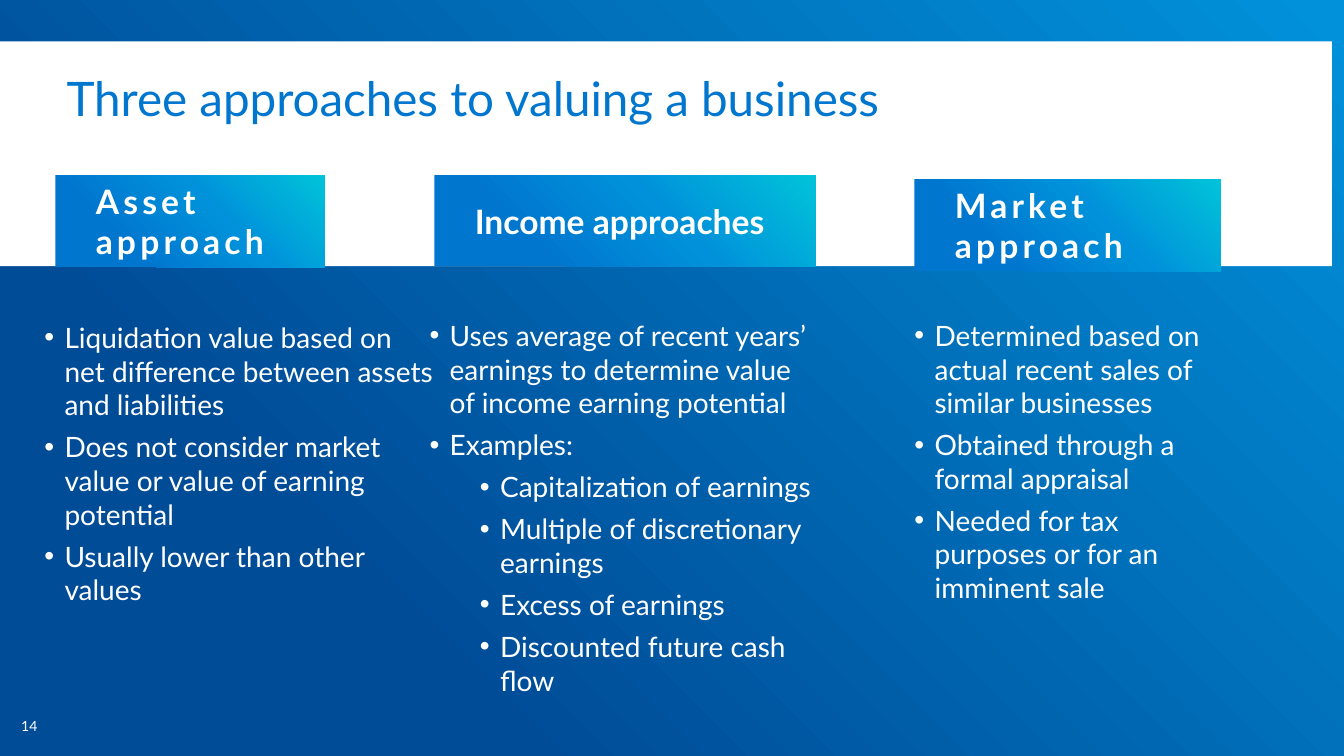
from lxml.etree import SubElement
from pptx import Presentation
from pptx.dml.color import RGBColor
from pptx.enum.shapes import MSO_SHAPE as Shape
from pptx.enum.text import MSO_ANCHOR as Anchor, PP_ALIGN as Align
from pptx.oxml.ns import qn
from pptx.util import Inches, Pt

W, H = Inches(13.33), Inches(7.5)
FONT = "Lato"
WHITE, BLUE = "FFFFFF", "0076CF"
BACKDROP = [(25, "004C97"), (99, "0091DA")]
BANNER = [(25, BLUE), (60, "0091DA"), (100, "00C3D9")]

HEADERS = [
    ("Asset approach", (4.13, 23.2, 20.03, 12.13), 3),
    ("Income approaches", (32.33, 23.2, 28.36, 12), 0),
    ("Market approach", (68.04, 23.73, 22.81, 12.13), 3),
]
BODIES = [
    ((3.3, 42.4, 28.96, 50.8), 0, [
        (0, "Liquidation value based on net difference between assets and liabilities"),
        (0, "Does not consider market value or value of earning potential"),
        (0, "Usually lower than other values"),
    ]),
    ((31.96, 42.13, 29.11, 52.27), 0, [
        (0, "Uses average of recent years’ earnings to determine value of income earning potential"),
        (0, "Examples:"),
        (1, "Capitalization of earnings"),
        (1, "Multiple of discretionary earnings"),
        (1, "Excess of earnings"),
        (1, "Discounted future cash flow"),
    ]),
    ((68.04, 42.13, 25.43, 48.8), 0.3, [
        (0, "Determined based on actual recent sales of similar businesses"),
        (0, "Obtained through a formal appraisal"),
        (0, "Needed for tax purposes or for an imminent sale"),
    ]),
]


def rgb(color):
    return RGBColor.from_string(color)


def place(box):
    x, y, w, h = box
    return [int(v * full / 100) for v, full in ((x, W), (y, H), (w, W), (h, H))]


def add_rect(s, box):
    sp = s.shapes.add_shape(Shape.RECTANGLE, *place(box))
    sp.shadow.inherit = False
    sp.line.fill.background()
    return sp


def fill_gradient(sp, stops):
    sp.fill.gradient()
    sp.fill.gradient_angle = 45
    stop_list = sp._element.spPr.find(qn("a:gradFill")).find(qn("a:gsLst"))
    for old in list(stop_list):
        stop_list.remove(old)
    for pos, color in stops:
        stop = SubElement(stop_list, qn("a:gs"), pos=str(pos * 1000))
        SubElement(stop, qn("a:srgbClr"), val=color)


def set_frame(tf, margins, anchor):
    tf.word_wrap = True
    tf.margin_left, tf.margin_top, tf.margin_right, tf.margin_bottom = map(Inches, margins)
    tf.vertical_anchor = anchor


def add_run(p, text, size, color=WHITE, bold=False, spacing=0):
    p.alignment = Align.LEFT
    r = p.add_run()
    r.text = text
    r.font.name = FONT
    r.font.size = Pt(size)
    r.font.bold = bold
    r.font.color.rgb = rgb(color)
    if spacing:
        r.font._element.set("spc", str(spacing * 100))


def add_text(s, box, right=0, anchor=Anchor.TOP):
    tf = s.shapes.add_textbox(*place(box)).text_frame
    set_frame(tf, (0, 0, right, 0), anchor)
    return tf


def add_header(s, text, box, spacing):
    sp = add_rect(s, box)
    fill_gradient(sp, BANNER)
    set_frame(sp.text_frame, (0.4, 0.05, 0.4, 0.05), Anchor.MIDDLE)
    add_run(sp.text_frame.paragraphs[0], text, 24, bold=True, spacing=spacing)


def add_bullets(s, box, right, items):
    tf = add_text(s, box, right)
    for i, (level, text) in enumerate(items):
        p = tf.add_paragraph() if i else tf.paragraphs[0]
        p.level = level
        p.space_before = Pt(6 if i else 0)
        props = p._p.get_or_add_pPr()
        props.set("marL", str(Inches(0.2 + 0.5 * level)))
        props.set("indent", str(-Inches(0.2)))
        SubElement(props, qn("a:buFont"), typeface="Arial")
        SubElement(props, qn("a:buChar"), char="•")
        add_run(p, text, 20)


def main():
    prs = Presentation()
    prs.slide_width, prs.slide_height = W, H
    s = prs.slides.add_slide(prs.slide_layouts[6])

    fill_gradient(add_rect(s, (0, 0, 100, 100)), BACKDROP)
    band = add_rect(s, (-0.9, 5.47, 100, 29.73))
    band.fill.solid()
    band.fill.fore_color.rgb = rgb(WHITE)

    number = add_text(s, (1.58, 91.73, 3.45, 5.47), anchor=Anchor.BOTTOM)
    add_run(number.paragraphs[0], "14", 10)
    title = add_text(s, (4.95, 9.07, 90.02, 6.67))
    add_run(title.paragraphs[0], "Three approaches to valuing a business", 34, BLUE)

    for header in HEADERS:
        add_header(s, *header)
    for body in BODIES:
        add_bullets(s, *body)
    prs.save("out.pptx")


if __name__ == "__main__":
    main()
